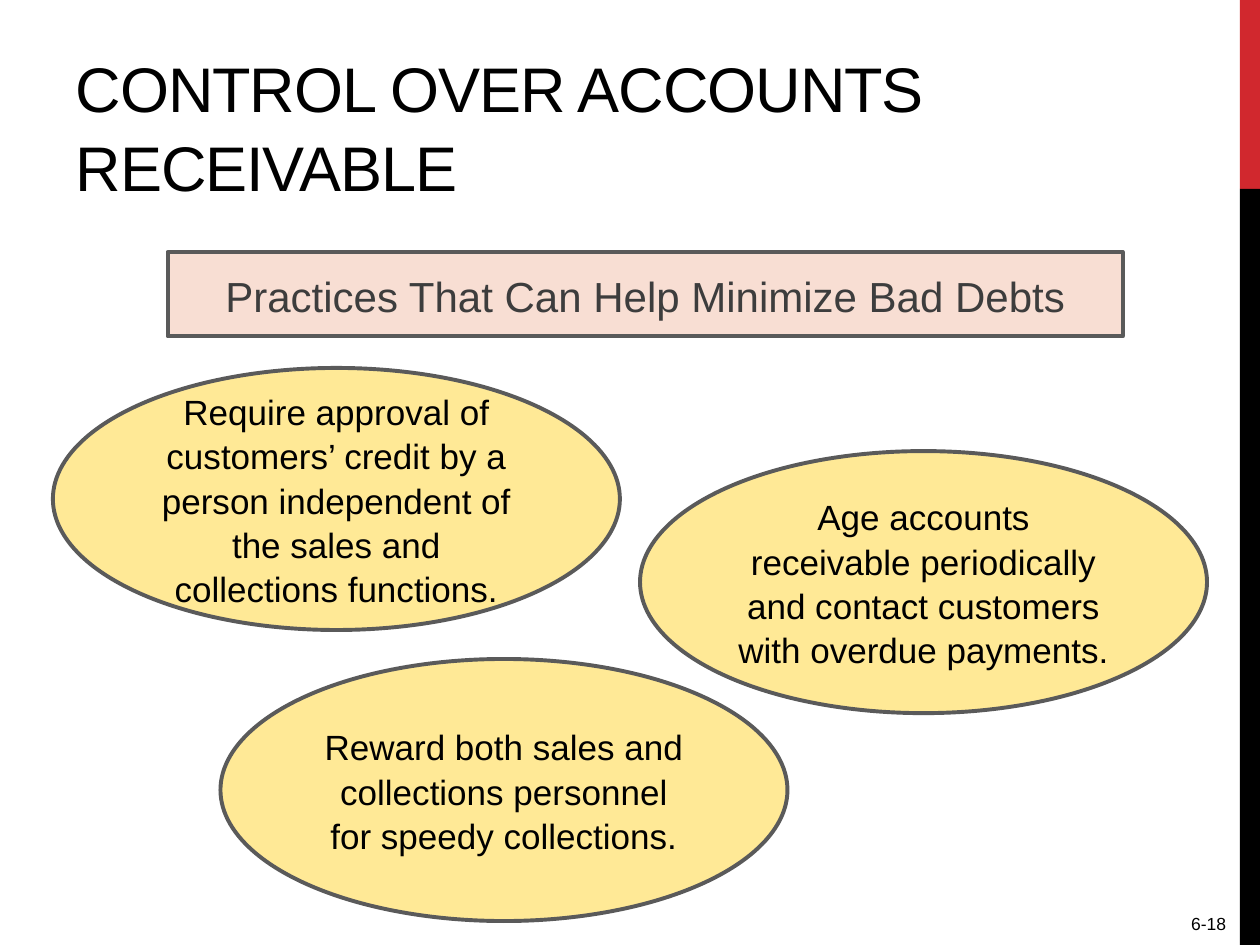
from dataclasses import dataclass

from pptx import Presentation
from pptx.dml.color import RGBColor
from pptx.enum.shapes import MSO_SHAPE as Preset
from pptx.enum.text import MSO_ANCHOR as Anchor, MSO_AUTO_SIZE as AutoSize, PP_ALIGN as Align
from pptx.util import Inches, Pt


@dataclass(frozen=True)
class Theme:
    font: str = "Arial"
    ink: str = "000000"
    banner_ink: str = "3D3D3D"
    accent: str = "D1282E"
    banner: str = "F8DED3"
    bubble: str = "FFE996"
    outline: str = "5A5A5A"
    outline_width: float = 2.25
    title_size: int = 36
    banner_size: int = 24
    body_size: int = 20
    number_size: int = 10
    leading: float = 1.05


THEME = Theme()
WIDTH, HEIGHT = 10, 7.5

# Content
TITLE = "CONTROL OVER ACCOUNTS RECEIVABLE"
BANNER = "Practices That Can Help Minimize Bad Debts"
PAGE_NUMBER = "6-18"
PRACTICES = [  # left, top, text
    (0.42, 2.92, "Require approval of customers’ credit by a person independent of "
                 "the sales and collections functions."),
    (5.08, 3.58, "Age accounts receivable periodically and contact customers "
                 "with overdue payments."),
    (1.75, 5.23, "Reward both sales and collections personnel for speedy collections."),
]

# Layout
STRIPE_WIDTH = 0.16
STRIPE_SPLIT = HEIGHT / 5
BUBBLE_SIZE = (4.5, 2.08)


def write(shape, text, size, color=THEME.ink, align=Align.CENTER,
          anchor=Anchor.MIDDLE, tracking=None):
    frame = shape.text_frame
    frame.word_wrap = True
    frame.auto_size = AutoSize.NONE
    frame.vertical_anchor = anchor
    para = frame.paragraphs[0]
    para.alignment = align
    para.line_spacing = THEME.leading
    span = para.add_run()
    span.text = text
    span.font.name = THEME.font
    span.font.size = Pt(size)
    span.font.color.rgb = RGBColor.from_string(color)
    if tracking is not None:
        span.font._element.set("spc", str(round(tracking * 100)))


def place(shape, left, top, width, height):
    shape.left, shape.top = Inches(left), Inches(top)
    shape.width, shape.height = Inches(width), Inches(height)


def add_panel(page, preset, area, fill, outline=None):
    shape = page.shapes.add_shape(preset, *map(Inches, area))
    shape.shadow.inherit = False
    shape.fill.solid()
    shape.fill.fore_color.rgb = RGBColor.from_string(fill)
    if outline:
        shape.line.color.rgb = RGBColor.from_string(outline)
        shape.line.width = Pt(THEME.outline_width)
    else:
        shape.line.fill.background()
    return shape


def main():
    deck = Presentation()
    deck.slide_width, deck.slide_height = Inches(WIDTH), Inches(HEIGHT)
    page = deck.slides.add_slide(deck.slide_layouts[5])

    # Side stripe
    stripe_left = WIDTH - STRIPE_WIDTH
    for top, bottom, color in [(0, STRIPE_SPLIT, THEME.accent),
                               (STRIPE_SPLIT, HEIGHT, THEME.ink)]:
        add_panel(page, Preset.RECTANGLE,
                  (stripe_left, top, STRIPE_WIDTH, bottom - top), color)

    # Page number
    number = page.shapes.add_textbox(*map(Inches, (8, 7.19, 1.83, 0.31)))
    write(number, PAGE_NUMBER, THEME.number_size, align=Align.RIGHT, anchor=Anchor.TOP)

    # Title
    title = page.shapes.title
    place(title, 0.5, 0.17, 9.17, 1.5)
    write(title, TITLE, THEME.title_size, align=Align.LEFT,
          anchor=Anchor.BOTTOM, tracking=-0.6)

    # Banner
    banner = add_panel(page, Preset.RECTANGLE, (1.33, 2, 7.58, 0.67),
                       THEME.banner, THEME.outline)
    write(banner, BANNER, THEME.banner_size, color=THEME.banner_ink)

    # Practices
    for left, top, text in PRACTICES:
        bubble = add_panel(page, Preset.OVAL, (left, top, *BUBBLE_SIZE),
                           THEME.bubble, THEME.outline)
        write(bubble, text, THEME.body_size)

    deck.save("out.pptx")


if __name__ == "__main__":
    main()
